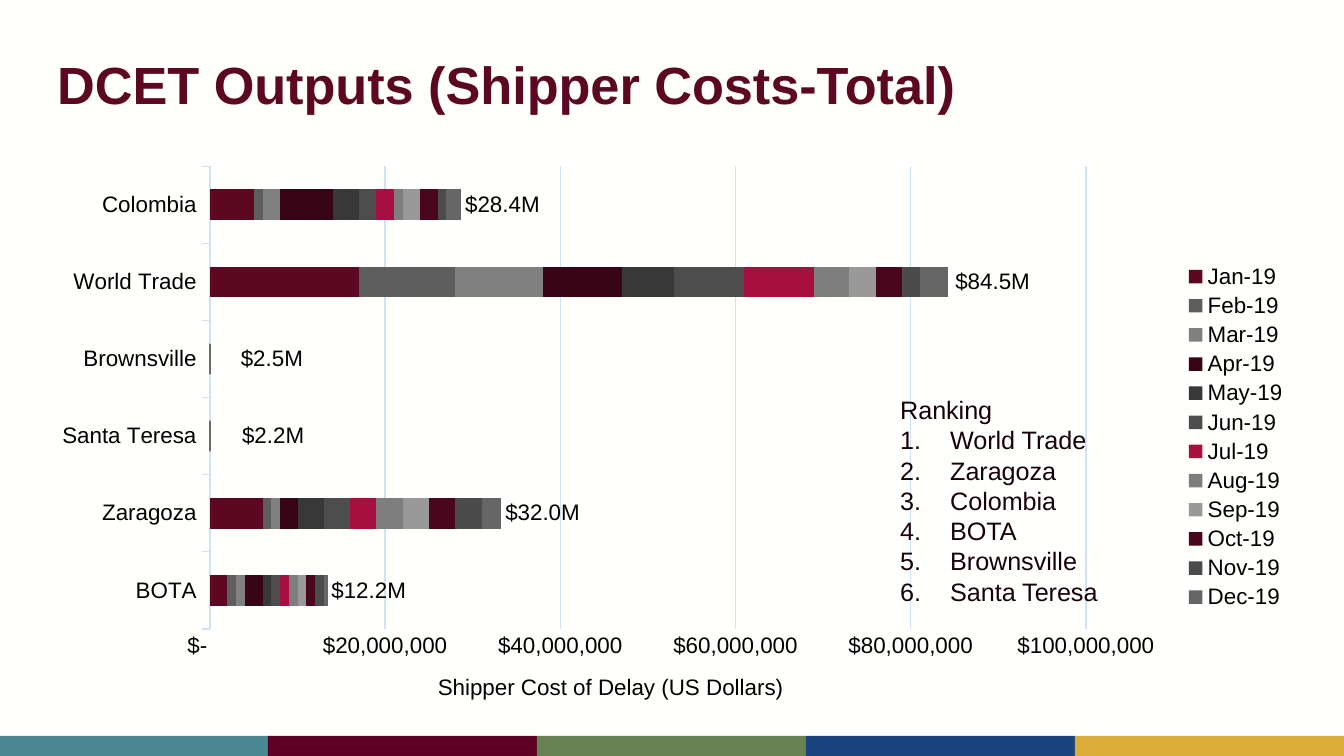
from typing import NamedTuple

from lxml.etree import SubElement
from pptx import Presentation
from pptx.chart.data import CategoryChartData
from pptx.dml.color import RGBColor
from pptx.enum.chart import XL_CHART_TYPE, XL_LEGEND_POSITION, XL_TICK_MARK
from pptx.enum.shapes import MSO_SHAPE
from pptx.enum.text import MSO_ANCHOR
from pptx.oxml import parse_xml
from pptx.oxml.ns import nsdecls, qn
from pptx.util import Emu, Pt

FONT = "Arial"
GRID = "D2E1F6"
PAPER = "FFFFFE"
MILLION = 1_000_000
DOLLARS = '_("$"* #,##0_);_("$"* \\(#,##0\\);_("$"* "-"??_);_(@_)'
NO_LEADERS = (
    f'<c:extLst {nsdecls("c")}><c:ext uri="{{CE6537A1-D6FC-4f65-9D91-7224C49458BB}}" '
    'xmlns:c15="http://schemas.microsoft.com/office/drawing/2012/chart">'
    '<c15:showLeaderLines val="0"/></c:ext></c:extLst>')


class Box(NamedTuple):
    x: int
    y: int
    w: int
    h: int


class Month(NamedTuple):
    name: str
    color: str
    costs: tuple[float, ...]


class Total(NamedTuple):
    crossing: str
    label: str
    shift: int


SLIDE = Box(0, 0, 1344, 756)
CHART = Box(44, 146, 1257, 582)
STRIPES = ["4B8992", "5C0024", "678250", "19447E", "DDAB37"]
RANKING = ["World Trade", "Zaragoza", "Colombia", "BOTA", "Brownsville", "Santa Teresa"]
TOTALS = [
    Total("BOTA", "$12.2M", 43),
    Total("Zaragoza", "$32.0M", 51),
    Total("Santa Teresa", "$2.2M", 63),
    Total("Brownsville", "$2.5M", 62),
    Total("World Trade", "$84.5M", 59),
    Total("Colombia", "$28.4M", 49),
]
MONTHS = [
    Month("Jan-19", "5C0823", (2, 6, 0, 0, 17, 5)),
    Month("Feb-19", "5E5E5E", (1, 1, 0, 0, 11, 1)),
    Month("Mar-19", "808080", (1, 1, 0, 0, 10, 2)),
    Month("Apr-19", "370515", (2, 2, 0, 0, 9, 6)),
    Month("May-19", "383838", (1, 3, 0, 0, 6, 3)),
    Month("Jun-19", "4D4D4D", (1, 3, 0, 0, 8, 2)),
    Month("Jul-19", "A70F40", (1, 3, 0, 0, 8, 2)),
    Month("Aug-19", "7E7E7E", (1, 3, 0, 0, 4, 1)),
    Month("Sep-19", "999999", (1, 3, 0, 0, 3, 2)),
    Month("Oct-19", "4A061C", (1, 3, 0, 0, 3, 2)),
    Month("Nov-19", "4B4B4B", (1, 3, 0, 0, 2, 1)),
    Month("Dec-19", "666666", (0.5, 2.2, 0.1, 0.1, 3.2, 1.6)),
]


def px(n: int) -> Emu:
    return Emu(round(n * 914400 / 134.4))


def place(box: Box) -> tuple[Emu, ...]:
    return tuple(px(n) for n in box)


def rgb(color: str) -> RGBColor:
    return RGBColor.from_string(color)


def set_font(font, size: float = 12, color: str = "000000", bold: bool = False) -> None:
    font.name = FONT
    font.size = Pt(size)
    font.bold = bold
    font.color.rgb = rgb(color)


def add_run(p, text: str, **fmt) -> None:
    r = p.add_run()
    r.text = text
    set_font(r.font, **fmt)


def add_text(slide, box: Box, lines: list[str], numbered: bool = False,
             anchor=MSO_ANCHOR.TOP, spacing: float = 1.0, **fmt) -> None:
    tf = slide.shapes.add_textbox(*place(box)).text_frame
    tf.word_wrap = True
    tf.vertical_anchor = anchor
    for i, line in enumerate(lines):
        p = tf.add_paragraph() if i else tf.paragraphs[0]
        p.line_spacing = spacing
        if numbered and i:
            pPr = p._p.get_or_add_pPr()
            pPr.set("marL", str(px(50)))
            pPr.set("indent", str(-px(50)))
            SubElement(pPr, qn("a:buFont"), typeface="+mj-lt")
            SubElement(pPr, qn("a:buAutoNum"), type="arabicPeriod")
        add_run(p, line, **fmt)


def add_stripe(slide, box: Box, color: str) -> None:
    sp = slide.shapes.add_shape(MSO_SHAPE.RECTANGLE, *place(box))
    sp.shadow.inherit = False
    sp.fill.solid()
    sp.fill.fore_color.rgb = rgb(color)
    sp.line.fill.background()


def manual_layout(x: float, y: float, edge: bool = False, size: str = "", target: str = ""):
    modes = '<c:xMode val="edge"/><c:yMode val="edge"/>' if edge else ""
    return parse_xml(
        f'<c:layout {nsdecls("c")}><c:manualLayout>{target}{modes}'
        f'<c:x val="{x:.3f}"/><c:y val="{y:.3f}"/>{size}</c:manualLayout></c:layout>')


def style_axes(chart) -> None:
    cat, val = chart.category_axis, chart.value_axis
    cat.major_tick_mark = XL_TICK_MARK.OUTSIDE
    cat.format.line.color.rgb = rgb(GRID)
    cat.format.line.width = Pt(0.75)
    val.major_tick_mark = XL_TICK_MARK.NONE
    val.format.line.fill.background()
    val.minimum_scale, val.maximum_scale = 0, 100 * MILLION
    val.major_unit = 20 * MILLION
    val.has_major_gridlines = True
    val.major_gridlines.format.line.color.rgb = rgb(GRID)
    val.major_gridlines.format.line.width = Pt(0.75)
    val.tick_labels.number_format = DOLLARS
    val.tick_labels.number_format_is_linked = False
    for axis in (cat, val):
        set_font(axis.tick_labels.font)
    title = val.axis_title
    add_run(title.text_frame.paragraphs[0], "Shipper Cost of Delay (US Dollars)")
    for old in title._element.findall(qn("c:layout")):
        title._element.remove(old)
    title._element.find(qn("c:tx")).addnext(manual_layout(0.31, 0.9, edge=True))


def add_totals(series) -> None:
    for i, total in enumerate(TOTALS):
        label = series.points[i].data_label
        add_run(label.text_frame.paragraphs[0], total.label)
        dLbl = label._get_or_add_dLbl()
        dLbl.find(qn("c:idx")).addnext(manual_layout(total.shift / CHART.w, 0))
    dLbls = series._element.find(qn("c:dLbls"))
    for leaders in dLbls.findall(qn("c:showLeaderLines")):
        leaders.set("val", "0")
    dLbls.append(parse_xml(NO_LEADERS))


def add_cost_chart(slide) -> None:
    data = CategoryChartData(number_format=DOLLARS)
    data.categories = [t.crossing for t in TOTALS]
    for month in MONTHS:
        data.add_series(month.name, [round(c * MILLION) for c in month.costs])
    chart = slide.shapes.add_chart(
        XL_CHART_TYPE.BAR_STACKED, *place(CHART), data).chart
    set_font(chart.font)
    chart.has_title = False
    chart.has_legend = True
    chart.legend.position = XL_LEGEND_POSITION.RIGHT
    chart.legend.include_in_layout = False
    set_font(chart.legend.font)
    plot = chart.plots[0]
    plot.gap_width, plot.overlap = 150, 100
    plot.vary_by_categories = False
    for series, month in zip(plot.series, MONTHS):
        series.format.fill.solid()
        series.format.fill.fore_color.rgb = rgb(month.color)
    style_axes(chart)
    add_totals(plot.series[len(MONTHS) - 1])
    area = chart._chartSpace.chart.plotArea
    for old in area.findall(qn("c:layout")):
        area.remove(old)
    area.insert(0, manual_layout(
        0.132, 0.035, edge=True, size='<c:w val="0.697"/><c:h val="0.795"/>',
        target='<c:layoutTarget val="inner"/>'))


def main() -> None:
    prs = Presentation()
    prs.slide_width, prs.slide_height = px(SLIDE.w), px(SLIDE.h)
    slide = prs.slides.add_slide(prs.slide_layouts[6])
    slide.background.fill.solid()
    slide.background.fill.fore_color.rgb = rgb(PAPER)
    for i, color in enumerate(STRIPES):
        add_stripe(slide, Box(i * SLIDE.w // len(STRIPES), 736, 269, 20), color)
    add_text(slide, Box(44, 41, 1257, 94), ["DCET Outputs (Shipper Costs-Total)"],
             anchor=MSO_ANCHOR.MIDDLE, spacing=0.9, size=28, color="5C0823", bold=True)
    add_cost_chart(slide)
    add_text(slide, Box(887, 388, 282, 258), ["Ranking", *RANKING],
             numbered=True, size=13.5, color="160208")
    prs.save("out.pptx")


if __name__ == "__main__":
    main()
